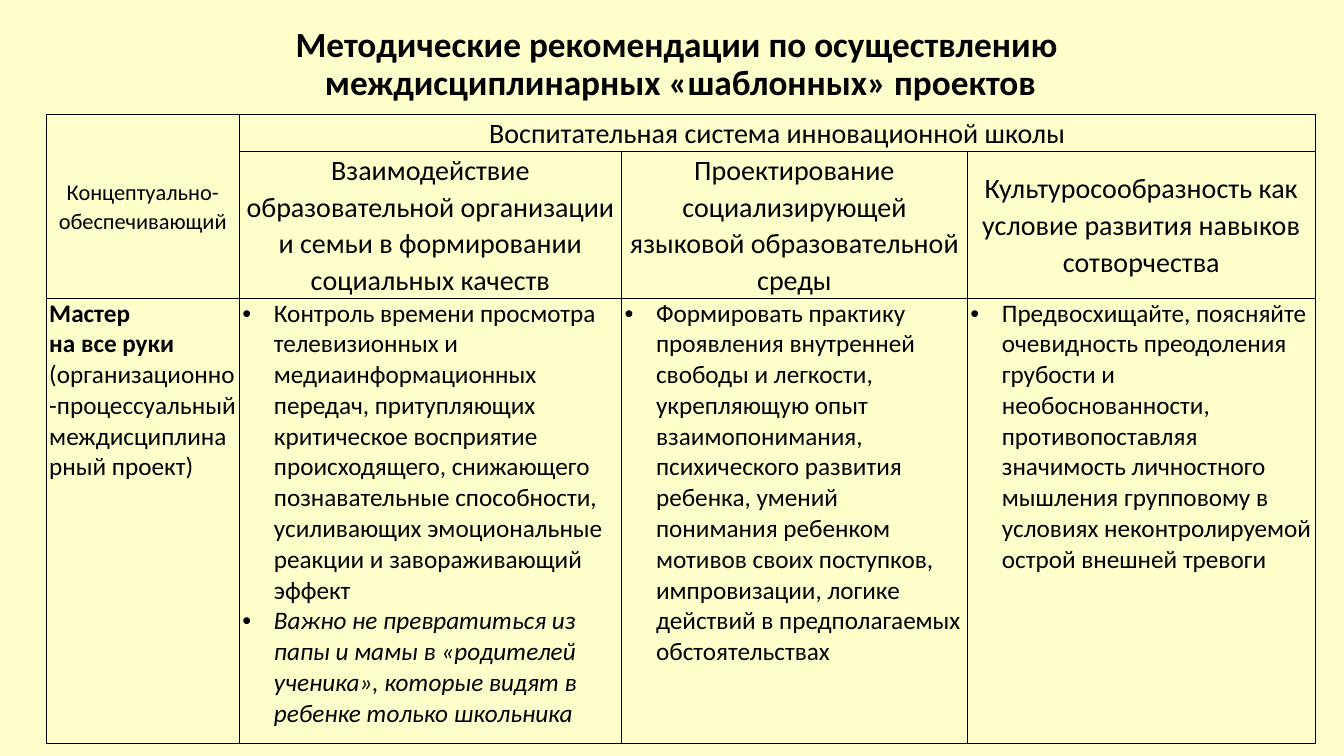
import lxml.etree
import pptx
import pptx.dml.color
import pptx.enum.text
import pptx.oxml.ns
import pptx.util

Pt = pptx.util.Pt
ALIGN = pptx.enum.text.PP_ALIGN
ANCHOR = pptx.enum.text.MSO_ANCHOR
qn = pptx.oxml.ns.qn

COLORS = {"background": "FFFFCC", "ink": "000000"}
FONT = "Calibri"
INDENT = 22.5


def add_run(paragraph, text, size, bold=False, italic=False):
    run = paragraph.add_run()
    run.text = text
    run.font.name = FONT
    run.font.size = Pt(size)
    run.font.bold = bold
    run.font.italic = italic
    run.font.color.rgb = pptx.dml.color.RGBColor.from_string(COLORS["ink"])


def add_borders(cell):
    properties = cell._tc.get_or_add_tcPr()
    for side in ("a:lnL", "a:lnR", "a:lnT", "a:lnB"):
        line = lxml.etree.SubElement(properties, qn(side), w=str(Pt(1)))
        fill = lxml.etree.SubElement(line, qn("a:solidFill"))
        lxml.etree.SubElement(fill, qn("a:srgbClr"), val=COLORS["ink"])


# Slide
presentation = pptx.Presentation()
presentation.slide_width = Pt(960)
presentation.slide_height = Pt(540)
slide = presentation.slides.add_slide(presentation.slide_layouts[6])
slide.background.fill.solid()
slide.background.fill.fore_color.rgb = pptx.dml.color.RGBColor.from_string(COLORS["background"])

# Title
title = slide.shapes.add_textbox(Pt(33), Pt(18.7), Pt(906.5), Pt(55.5))
title.text_frame.word_wrap = True
title.text_frame.vertical_anchor = ANCHOR.MIDDLE
paragraph = title.text_frame.paragraphs[0]
paragraph.alignment = ALIGN.CENTER
paragraph.line_spacing = 0.9
add_run(paragraph, "Методические рекомендации по осуществлению ", 25.2, bold=True)
paragraph.add_line_break()
add_run(paragraph, "междисциплинарных «шаблонных» проектов", 25.2, bold=True)

# Table grid
column_widths = [138, 273, 247, 248.5]
row_heights = [26.2, 105, 318]
table = slide.shapes.add_table(
    len(row_heights), len(column_widths), Pt(33), Pt(81.8),
    Pt(sum(column_widths)), Pt(sum(row_heights))).table
table.first_row = False
table.horz_banding = False
for column, width in zip(table.columns, column_widths):
    column.width = Pt(width)
for row, height in zip(table.rows, row_heights):
    row.height = Pt(height)
for cell in table.iter_cells():
    cell.margin_left = cell.margin_right = Pt(2.2)
    cell.margin_top = cell.margin_bottom = 0
    add_borders(cell)
    cell.fill.background()
table.cell(0, 0).merge(table.cell(1, 0))
table.cell(0, 1).merge(table.cell(0, 3))

# Headings: row, column, size, text
headings = [
    (0, 0, 16, "Концептуально-обеспечивающий"),
    (0, 1, 20, "Воспитательная система инновационной школы"),
    (1, 1, 20, "Взаимодействие образовательной организации и семьи "
               "в формировании социальных качеств"),
    (1, 2, 20, "Проектирование социализирующей языковой образовательной среды"),
    (1, 3, 20, "Культуросообразность как условие развития навыков сотворчества"),
]
for row, column, size, text in headings:
    cell = table.cell(row, column)
    cell.vertical_anchor = ANCHOR.MIDDLE
    paragraph = cell.text_frame.paragraphs[0]
    paragraph.alignment = ALIGN.CENTER
    paragraph.line_spacing = 1.07
    add_run(paragraph, text, size)

# Project name
project_frame = table.cell(2, 0).text_frame
add_run(project_frame.paragraphs[0], "Мастер", 18, bold=True)
paragraph = project_frame.add_paragraph()
add_run(paragraph, "на все руки ", 18, bold=True)
add_run(paragraph, "(организационно-процессуальный междисциплинарный проект)", 18)

# Recommendations: column, italic, text
recommendations = [
    (1, False, "Контроль времени просмотра телевизионных и медиаинформационных передач, "
               "притупляющих критическое восприятие происходящего, снижающего "
               "познавательные способности, усиливающих эмоциональные реакции "
               "и завораживающий эффект"),
    (1, True, "Важно не превратиться из папы и мамы в «родителей ученика», "
              "которые видят в ребенке только школьника"),
    (2, False, "Формировать практику проявления внутренней свободы и легкости, "
               "укрепляющую опыт взаимопонимания, психического развития ребенка, "
               "умений понимания ребенком мотивов своих поступков, импровизации, "
               "логике действий в предполагаемых обстоятельствах"),
    (3, False, "Предвосхищайте, поясняйте очевидность преодоления грубости "
               "и необоснованности, противопоставляя значимость личностного мышления "
               "групповому в условиях неконтролируемой острой внешней тревоги"),
]
for column, italic, text in recommendations:
    frame = table.cell(2, column).text_frame
    paragraph = frame.add_paragraph() if frame.text else frame.paragraphs[0]
    properties = paragraph._p.get_or_add_pPr()
    properties.set("marL", str(Pt(INDENT)))
    properties.set("indent", str(-Pt(INDENT)))
    lxml.etree.SubElement(properties, qn("a:buFont"), typeface="Arial")
    lxml.etree.SubElement(properties, qn("a:buChar"), char="•")
    add_run(paragraph, text, 18, italic=italic)

presentation.save("out.pptx")
